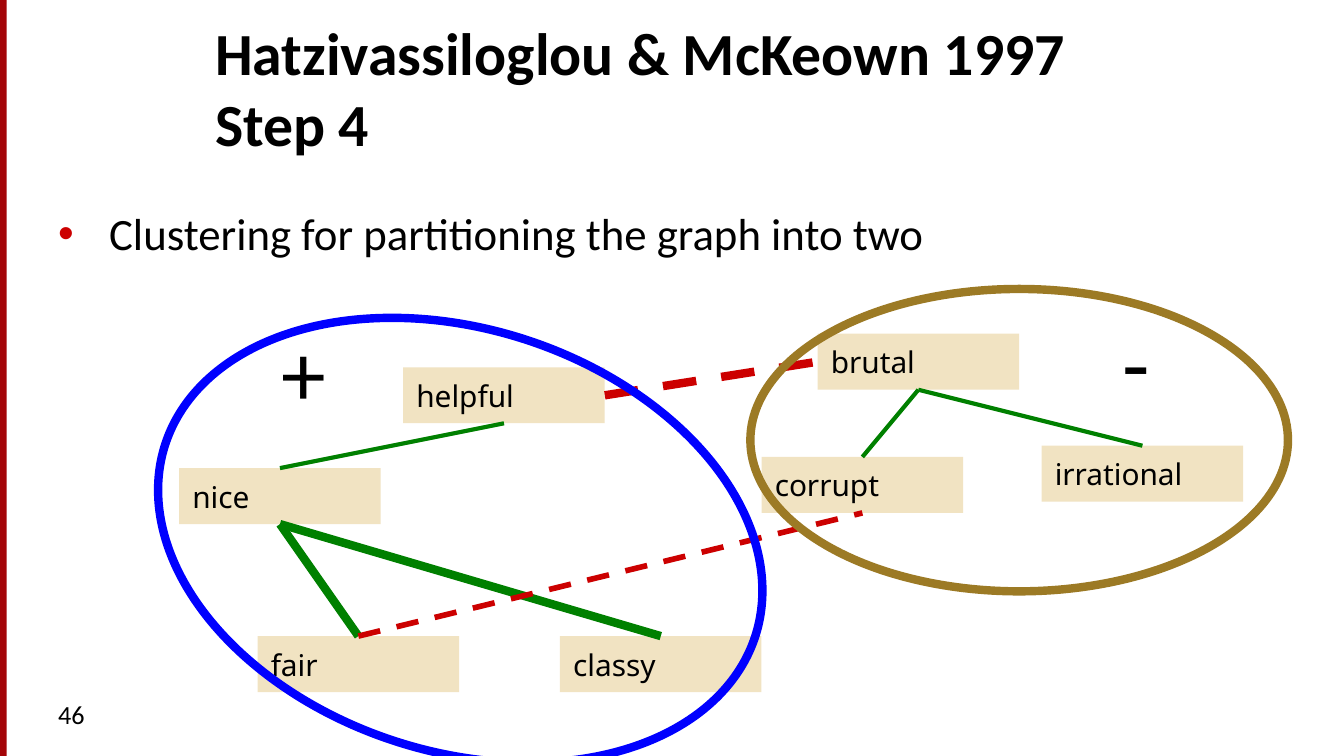
import pptx
import pptx.util
import pptx.dml.color
import pptx.enum.dml
import pptx.enum.shapes
import pptx.enum.text
import pptx.oxml
import pptx.oxml.ns
from dataclasses import dataclass

SHAPE = pptx.enum.shapes.MSO_SHAPE
ANCHOR = pptx.enum.text.MSO_ANCHOR
TOP, LEFT, BOTTOM, RIGHT = range(4)  # connection sites of a rectangle


@dataclass
class Theme:
    text: str = "000000"
    stripe: str = "A40508"
    bullet: str = "CC0000"
    node: str = "F1E3C2"
    same: str = "008000"
    opposite: str = "CC0000"
    positive: str = "0000FF"
    negative: str = "9C7A25"
    body_font: str = "Calibri"
    node_font: str = "Noto Sans"
    title_size: int = 32
    body_size: int = 24
    node_size: int = 16
    number_size: int = 14
    sign_size: int = 48
    ring_width: float = 4.5


def rgb(value):
    return pptx.dml.color.RGBColor.from_string(value)


class Deck:
    """Slide builder on a grid of 12 cells to the inch."""

    def __init__(self, theme):
        self.theme = theme
        self.prs = pptx.Presentation()
        self.prs.slide_width = self.cells(120)
        self.prs.slide_height = self.cells(67.5)
        self.s = self.prs.slides.add_slide(self.prs.slide_layouts[5])

    def cells(self, n):
        return pptx.util.Inches(n / 12)

    def box(self, cols_rows):
        return [self.cells(n) for n in cols_rows]

    def set_text(self, sp, text, size, font=None, bold=False, **frame):
        tf = sp.text_frame
        frame = {"word_wrap": True, "vertical_anchor": ANCHOR.TOP,
                 "auto_size": pptx.enum.text.MSO_AUTO_SIZE.NONE, **frame}
        for name, value in frame.items():
            setattr(tf, name, value)
        p = tf.paragraphs[0]
        p.text = text
        p.alignment = pptx.enum.text.PP_ALIGN.LEFT
        style = {"name": font or self.theme.body_font,
                 "size": pptx.util.Pt(size), "bold": bold}
        for r in p.runs:
            for name, value in style.items():
                setattr(r.font, name, value)
            r.font.color.rgb = rgb(self.theme.text)
        return p

    def title(self, text, *at):
        sp = self.s.shapes.title
        sp.left, sp.top, sp.width, sp.height = self.box(at)
        self.set_text(sp, text, self.theme.title_size, bold=True,
                      vertical_anchor=ANCHOR.BOTTOM)

    def text(self, text, size, *at, **frame):
        sp = self.s.shapes.add_textbox(*self.box(at))
        return self.set_text(sp, text, size, **frame)

    def bullet(self, text, *at):
        p = self.text(text, self.theme.body_size, *at)
        pPr = p._p.get_or_add_pPr()
        indent = pptx.util.Inches(0.38)
        pPr.set("marL", str(indent))
        pPr.set("indent", str(-indent))
        ns = pptx.oxml.ns.nsdecls("a")
        for xml in (f'<a:buClr {ns}><a:srgbClr val="{self.theme.bullet}"/></a:buClr>',
                    f'<a:buFont {ns} typeface="Arial"/>',
                    f'<a:buChar {ns} char="•"/>'):
            pPr.append(pptx.oxml.parse_xml(xml))

    def block(self, color, *at):
        sp = self.s.shapes.add_shape(SHAPE.RECTANGLE, *self.box(at))
        sp.shadow.inherit = False
        sp.fill.solid()
        sp.fill.fore_color.rgb = rgb(color)
        sp.line.fill.background()
        return sp

    def node(self, word, col, row):
        sp = self.block(self.theme.node, col, row, 18, 5)
        self.set_text(sp, word, self.theme.node_size, self.theme.node_font,
                      vertical_anchor=ANCHOR.MIDDLE)
        return sp

    def edge(self, start, start_site, end, end_site, color, width, dashed=False):
        c = self.s.shapes.add_connector(
            pptx.enum.shapes.MSO_CONNECTOR.STRAIGHT, 0, 0, 0, 0)
        c.begin_connect(start, start_site)
        c.end_connect(end, end_site)
        c.line.color.rgb = rgb(color)
        c.line.width = pptx.util.Pt(width)
        if dashed:
            c.line.dash_style = pptx.enum.dml.MSO_LINE.DASH
        c._element.spPr.append(pptx.oxml.parse_xml(
            f'<a:effectLst {pptx.oxml.ns.nsdecls("a")}/>'))

    def ring(self, color, *at, rotation=0):
        sp = self.s.shapes.add_shape(SHAPE.OVAL, *self.box(at))
        sp.shadow.inherit = False
        sp.fill.background()
        sp.line.color.rgb = rgb(color)
        sp.line.width = pptx.util.Pt(self.theme.ring_width)
        sp.rotation = rotation


def main():
    theme = Theme()
    deck = Deck(theme)

    # Frame and text
    deck.block(theme.stripe, 0, 0, 0.6, 67.5)
    deck.title("Hatzivassiloglou & McKeown 1997\vStep 4", 18, 5, 98, 9.8)
    deck.bullet("Clustering for partitioning the graph into two",
                4, 17.8, 112, 43.8)
    deck.text("46", theme.number_size, 4, 61.8, 26, 4.5)

    # Adjective nodes: column and row of the top left corner
    places = {"classy": (50, 56.8), "nice": (16, 41.8), "helpful": (36, 32.8),
              "fair": (23, 56.8), "brutal": (73, 29.8),
              "irrational": (93, 39.8), "corrupt": (68, 40.8)}
    nodes = {word: deck.node(word, *at) for word, at in places.items()}

    # Links: solid for the same orientation, dashed for the opposite one
    links = [("brutal", BOTTOM, "corrupt", TOP, theme.same, 2.25),
             ("nice", BOTTOM, "classy", TOP, theme.same, 4.5),
             ("nice", BOTTOM, "fair", TOP, theme.same, 4.5),
             ("fair", TOP, "corrupt", BOTTOM, theme.opposite, 3, True),
             ("irrational", TOP, "brutal", BOTTOM, theme.same, 2.25),
             ("helpful", BOTTOM, "nice", TOP, theme.same, 2.25),
             ("helpful", RIGHT, "brutal", LEFT, theme.opposite, 4.5, True)]
    for start, start_site, end, end_site, *style in links:
        deck.edge(nodes[start], start_site, nodes[end], end_site, *style)

    # Clusters and their signs
    deck.ring(theme.positive, 13.4, 29.4, 55.4, 37.7, rotation=18)
    deck.ring(theme.negative, 67, 25.8, 48, 27)
    deck.text("+", theme.sign_size, 24, 27.7, 6.5, 10.9, word_wrap=False)
    deck.text("-", theme.sign_size, 99, 26.8, 4.9, 10.9, word_wrap=False)

    deck.prs.save("out.pptx")


if __name__ == "__main__":
    main()
